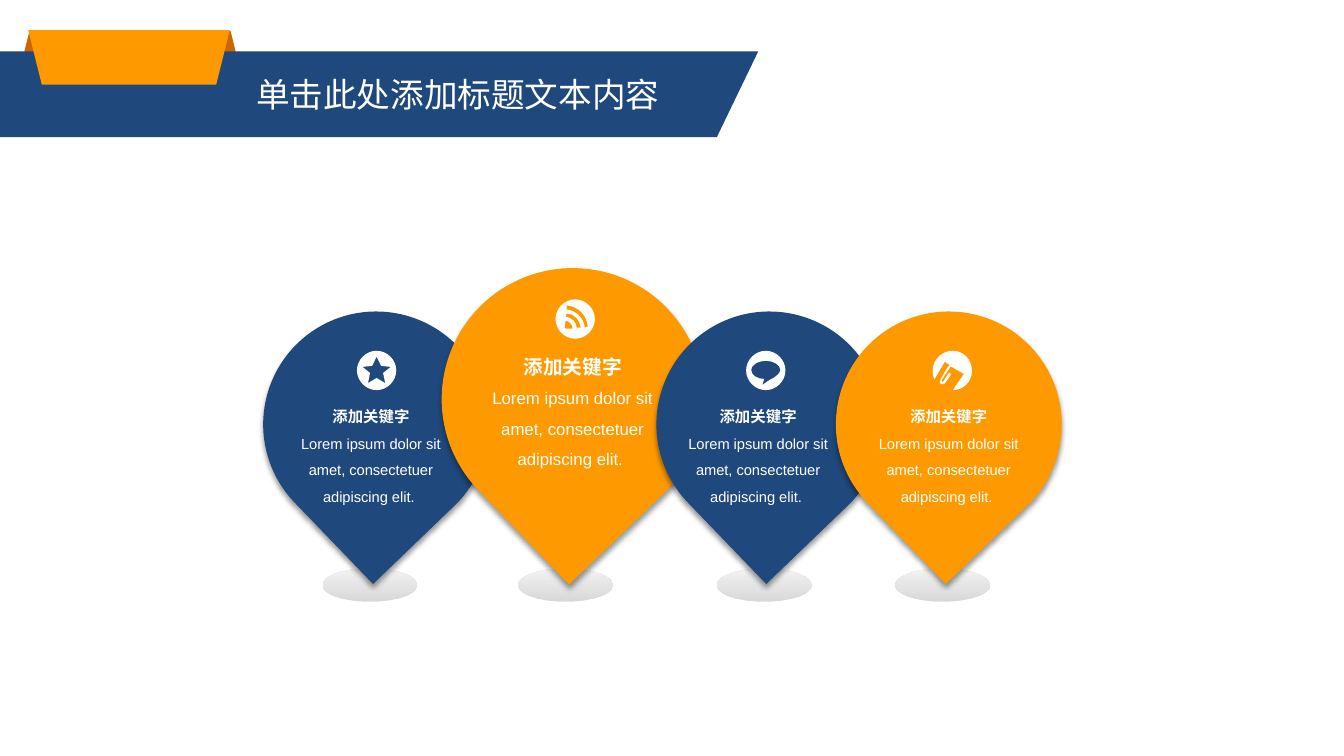
from lxml.etree import SubElement
from pptx import Presentation
from pptx.dml.color import RGBColor
from pptx.enum.shapes import MSO_SHAPE as Preset
from pptx.enum.text import MSO_AUTO_SIZE as AutoSize, PP_ALIGN as Align
from pptx.oxml.ns import qn
from pptx.util import Inches, Pt

BLUE, ORANGE, BROWN, WHITE = "1F487C", "FF9900", "CC6600", "FFFFFF"
KEYWORD = "添加关键字"
BODY = "Lorem ipsum dolor sit amet, consectetuer adipiscing elit. "

# Icon outlines in hundredths of an inch: pairs are points, sixes are curves.
DISC = [(19.5, 0), (9, 0, 0, 9, 0, 19.5), (0, 30, 9, 39, 19.5, 39),
        (30, 39, 39, 30, 39, 19.5), (39, 9, 30, 0, 19.5, 0)]
STAR = [DISC, [(28, 32), (19.5, 27), (11, 32), (13, 22), (5.5, 16), (15, 15),
               (19.5, 6), (24, 15), (33.5, 16), (26, 22)]]
FEED = [DISC,
        [(11, 29), (10, 29, 9, 29, 9, 28), (10, 21), (14, 22, 17, 25, 17, 29)],
        [(21, 28), (21, 23, 16, 18, 10, 17), (11, 14), (18, 14, 24, 20, 25, 28)],
        [(29, 28), (28, 18, 20, 11, 11, 10), (11, 6), (23, 7, 31, 16, 32, 27)]]
SPEECH = [DISC, [(27, 27), (24, 28, 16, 34, 16, 34), (18, 28),
                 (11, 28, 5, 24, 5, 19), (5, 14, 12, 10, 20, 10),
                 (27, 10, 34, 14, 34, 19), (34, 22, 30, 25, 27, 27)]]
CLIP = [[(20, 0), (9, 0, 0, 9, 0, 20), (0, 22, 0, 25, 2, 28), (12, 11), (17, 14),
         (16, 15, 16, 15, 15, 16), (8, 28), (7, 29, 7, 30, 7, 31),
         (7, 31, 8, 32, 8, 33), (9, 33, 10, 33, 11, 33), (12, 33, 12, 32, 13, 31),
         (18, 24), (18, 23, 18, 22, 17, 22), (16, 22), (11, 30),
         (11, 31, 11, 31, 10, 31), (9, 31, 9, 30, 9, 29), (17, 17),
         (17, 16, 18, 15, 19, 16), (31, 23), (20, 39),
         (31, 39, 39, 30, 39, 20), (39, 9, 31, 0, 20, 0)]]

GROUND_LEFTS = (5.14, 7.11, 8.88, 3.2)
# left, top, size, colour
FIRST_PIN, *OTHER_PINS = [(2.61, 3.09, 2.24, BLUE), (4.38, 2.66, 2.6, ORANGE),
                          (6.51, 3.09, 2.24, BLUE), (8.29, 3.09, 2.24, ORANGE)]
# text box, keyword size, body size
CAPTIONS = [((4.6, 3.33, 2.16, 1.4), 14, 12)] + [
    ((left, 3.88, 1.7, 1.21), 11, 10.5) for left in (2.83, 6.67, 8.56)]
ICONS = [(STAR, 3.54, 3.48), (FEED, 5.51, 2.97), (SPEECH, 7.4, 3.48), (CLIP, 9.25, 3.48)]


def color(value):
    return RGBColor.from_string(value)


class SlideBuilder:
    font = "Arial"

    def __init__(self, slide):
        self.shapes = slide.shapes

    def finish(self, shape, fill):
        shape.shadow.inherit = False
        shape.line.fill.background()
        if fill:
            shape.fill.solid()
            shape.fill.fore_color.rgb = color(fill)
        return shape

    def preset(self, kind, box, fill=None):
        return self.finish(self.shapes.add_shape(kind, *map(Inches, box)), fill)

    def ground(self, left):
        ellipse = self.preset(Preset.OVAL, (left, 5.64, 0.94, 0.33))
        ellipse.fill.gradient()
        ellipse.fill.gradient_angle = 90
        for stop, shade in zip(ellipse.fill.gradient_stops, ("D8D8D8", "F2F2F2")):
            stop.color.rgb = color(shade)

    def pin(self, left, top, size, fill):
        drop = self.preset(Preset.TEAR, (left, top, size, size), fill)
        drop.rotation = 136.1
        effects = drop.element.spPr.find(qn("a:effectLst"))
        shadow = SubElement(effects, qn("a:outerShdw"), blurRad=str(Pt(4)),
                            dist=str(Pt(3)), dir="5400000", rotWithShape="0")
        black = SubElement(shadow, qn("a:srgbClr"), val="000000")
        SubElement(black, qn("a:alpha"), val="40000")

    def freeform(self, outlines, fill, left=0, top=0):
        """Draw outlines given in inches/100 from left, top; inner ones are holes."""
        builder = None
        for outline in outlines:
            start, *rest = [(Inches(left + part[-2] / 100), Inches(top + part[-1] / 100))
                            for part in outline]
            if builder is None:
                builder = self.shapes.build_freeform(*start, scale=1.0)
            else:
                builder.move_to(*start)
            builder.add_line_segments(rest, close=True)
        shape = self.finish(builder.convert_to_shape(), fill)
        segments = list(shape.element.iter(qn("a:lnTo")))
        parts = [part for outline in outlines for part in outline[1:]]
        for segment, part in zip(segments, parts):
            if len(part) == 6:
                self.bend(segment, part, Inches(left) - shape.left, Inches(top) - shape.top)
        return shape

    def bend(self, segment, part, shift_x, shift_y):
        """Turn a straight segment into a cubic curve."""
        segment.tag = qn("a:cubicBezTo")
        for child in list(segment):
            segment.remove(child)
        for x, y in zip(part[::2], part[1::2]):
            SubElement(segment, qn("a:pt"), x=str(Inches(x / 100) + shift_x),
                       y=str(Inches(y / 100) + shift_y))

    def text(self, box, lines, wrap=True, align=Align.CENTER, spacing=1.5):
        """Add a text box; each line is (wording, size, bold)."""
        frame = self.shapes.add_textbox(*map(Inches, box)).text_frame
        frame.word_wrap = wrap
        frame.auto_size = AutoSize.SHAPE_TO_FIT_TEXT
        frame.margin_left = frame.margin_right = Inches(0.13)
        frame.margin_top = frame.margin_bottom = Inches(0.07)
        for index, (wording, size, bold) in enumerate(lines):
            paragraph = frame.add_paragraph() if index else frame.paragraphs[0]
            paragraph.text = wording
            paragraph.alignment = align
            paragraph.line_spacing = spacing
            font = paragraph.font
            font.name, font.size, font.bold = self.font, Pt(size), bold
            font.color.rgb = color(WHITE)


def main():
    presentation = Presentation()
    presentation.slide_width, presentation.slide_height = Inches(13.33), Inches(7.5)
    builder = SlideBuilder(presentation.slides.add_slide(presentation.slide_layouts[6]))

    for left in GROUND_LEFTS:
        builder.ground(left)
    builder.pin(*FIRST_PIN)

    builder.preset(Preset.TRAPEZOID, (0.16, 0.31, 2.26, 0.53), BROWN)
    builder.freeform([[(0, 51), (752, 51), (711, 136), (0, 136)]], BLUE)
    ribbon = builder.preset(Preset.TRAPEZOID, (0.28, 0.3, 2, 0.54), ORANGE)
    ribbon.element.spPr.find(qn("a:xfrm")).set("flipV", "1")
    builder.text((2.41, 0.66, 4.31, 0.54), [("单击此处添加标题文本内容", 24, False)],
                 wrap=False, align=Align.LEFT, spacing=1.0)

    for pin in OTHER_PINS:
        builder.pin(*pin)
    for box, keyword_size, body_size in CAPTIONS:
        builder.text(box, [(KEYWORD, keyword_size, True), (BODY, body_size, False)])
    for icon, left, top in ICONS:
        builder.freeform(icon, WHITE, left, top)

    presentation.save("out.pptx")


if __name__ == "__main__":
    main()
